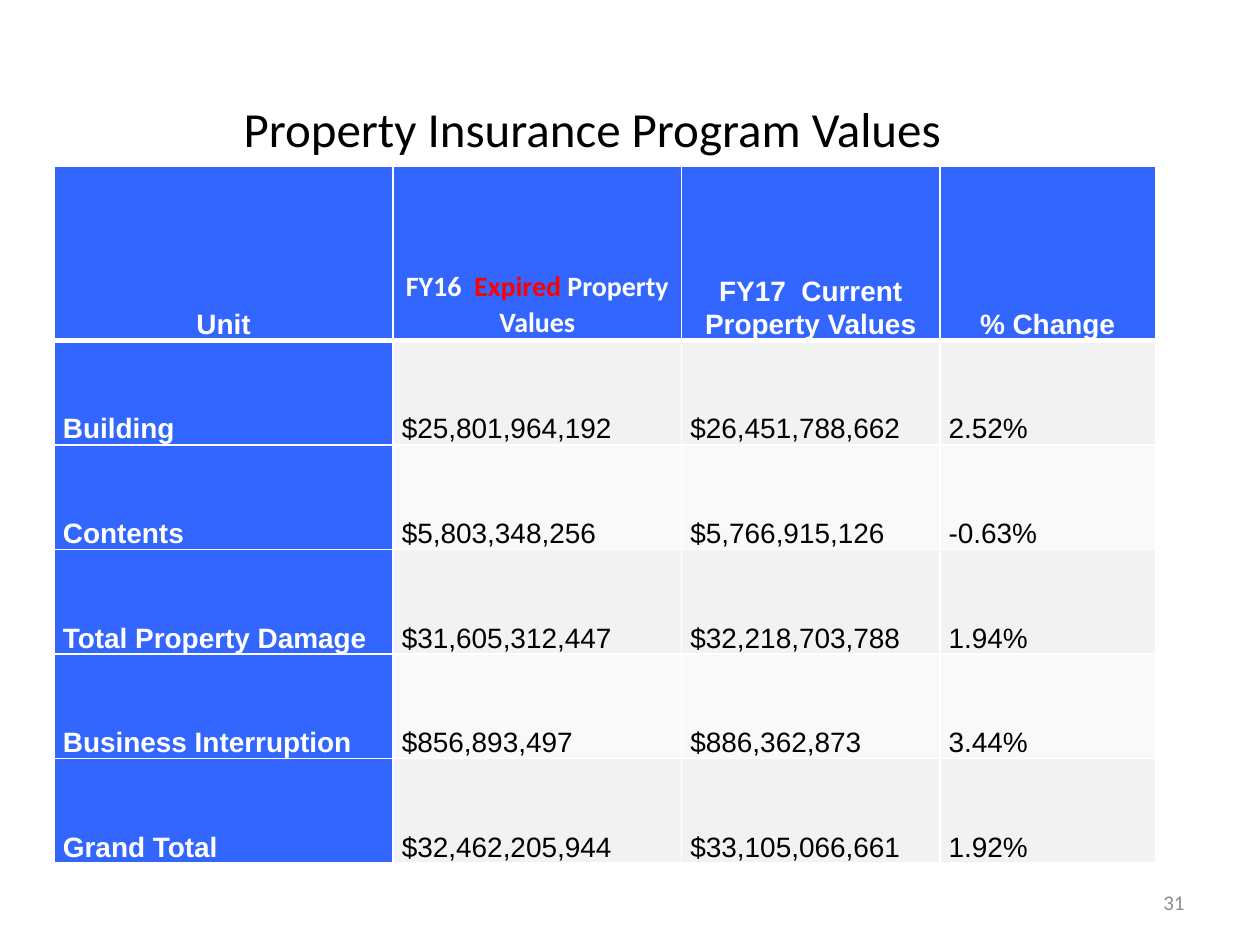
from pptx import Presentation
from pptx import util as u
from pptx.dml.color import RGBColor
from pptx.enum import text
from pptx.oxml import parse_xml
from pptx.oxml.ns import nsdecls

BLUE = RGBColor(0x33, 0x66, 0xFF)
WHITE = RGBColor(0xFF, 0xFF, 0xFF)
BLACK = RGBColor(0, 0, 0)
RED = RGBColor(0xFF, 0, 0)
GREY = RGBColor(0x8C, 0x8C, 0x8C)
BANDS = (RGBColor(0xF2, 0xF2, 0xF2), RGBColor(0xF9, 0xF9, 0xF9))

WIDTH, HEIGHT = u.Inches(10), u.Inches(7.5)
COLUMNS = (2.69, 2.29, 2.05, 1.71)
HEADER_HEIGHT, ROW_HEIGHT = 1.38, 0.83

HEADINGS = (
    [("Unit", WHITE)],
    [("FY16  ", WHITE), ("Expired ", RED), ("Property Values", WHITE)],
    [("FY17  Current Property Values", WHITE)],
    [("% Change", WHITE)],
)
HEADING_FONTS = ("Arial", "Calibri", "Arial", "Arial")
VALUES = (
    ("Building", "$25,801,964,192", "$26,451,788,662", "2.52%"),
    ("Contents", "$5,803,348,256", "$5,766,915,126", "-0.63%"),
    ("Total Property Damage", "$31,605,312,447", "$32,218,703,788", "1.94%"),
    ("Business Interruption", "$856,893,497", "$886,362,873", "3.44%"),
    ("Grand Total", "$32,462,205,944", "$33,105,066,661", "1.92%"),
)


def apply(target, **values):
    for name, value in values.items():
        setattr(target, name, value)


def add_run(paragraph, wording, color, **font):
    run = paragraph.add_run()
    run.text = wording
    apply(run.font, **font)
    run.font.color.rgb = color


def add_label(slide, wording, place, align, color, size):
    """Place a one-line label; place is left, top, width, height as slide shares."""
    left, top, width, height = place
    label = slide.shapes.add_textbox(
        int(left * WIDTH), int(top * HEIGHT), int(width * WIDTH), int(height * HEIGHT))
    apply(label.text_frame, word_wrap=True, vertical_anchor=text.MSO_ANCHOR.MIDDLE)
    paragraph = label.text_frame.paragraphs[0]
    paragraph.alignment = align
    add_run(paragraph, wording, color, name="Calibri", size=u.Pt(size))


def set_borders(cell, bottom):
    """Draw white 1 pt sides, with the bottom one as heavy as asked."""
    properties = cell._tc.get_or_add_tcPr()
    sides = {"lnL": 1, "lnR": 1, "lnT": 1, "lnB": bottom}
    for position, (side, points) in enumerate(sides.items()):
        properties.insert(position, parse_xml(
            f'<a:{side} {nsdecls("a")} w="{u.Pt(points)}"><a:solidFill>'
            f'<a:srgbClr val="{WHITE}"/></a:solidFill></a:{side}>'))


def fill_cell(cell, runs, fill, align, bold, font="Arial", bottom=1):
    apply(cell, margin_left=u.Inches(0.07), margin_right=u.Inches(0.07),
          margin_top=0, margin_bottom=0, vertical_anchor=text.MSO_ANCHOR.BOTTOM)
    cell.fill.solid()
    cell.fill.fore_color.rgb = fill
    set_borders(cell, bottom)
    paragraph = cell.text_frame.paragraphs[0]
    apply(paragraph, alignment=align, line_spacing=1.07)
    for wording, color in runs:
        add_run(paragraph, wording, color, name=font, size=u.Pt(16), bold=bold)


def add_values_table(slide):
    heights = [HEADER_HEIGHT] + [ROW_HEIGHT] * len(VALUES)
    table = slide.shapes.add_table(
        len(heights), len(COLUMNS), u.Inches(0.43), u.Inches(1.32),
        u.Inches(sum(COLUMNS)), u.Inches(sum(heights))).table
    for column, width in zip(table.columns, COLUMNS):
        column.width = u.Inches(width)
    for row, height in zip(table.rows, heights):
        row.height = u.Inches(height)

    for c, (runs, font) in enumerate(zip(HEADINGS, HEADING_FONTS)):
        fill_cell(table.cell(0, c), runs, BLUE, text.PP_ALIGN.CENTER, True, font, bottom=3)
    for r, values in enumerate(VALUES):
        for c, value in enumerate(values):
            is_unit = c == 0
            color, fill = (WHITE, BLUE) if is_unit else (BLACK, BANDS[r % 2])
            fill_cell(table.cell(r + 1, c), [(value, color)], fill,
                      text.PP_ALIGN.LEFT, is_unit)


def main():
    deck = Presentation()
    apply(deck, slide_width=WIDTH, slide_height=HEIGHT)
    slide = deck.slides.add_slide(deck.slide_layouts[6])
    add_label(slide, "Property Insurance Program Values", (0.02, 0.05, 0.9, 0.17),
              text.PP_ALIGN.CENTER, BLACK, 28)
    add_values_table(slide)
    add_label(slide, "31", (0.72, 0.93, 0.23, 0.05), text.PP_ALIGN.RIGHT, GREY, 12)
    deck.save("out.pptx")


if __name__ == "__main__":
    main()
